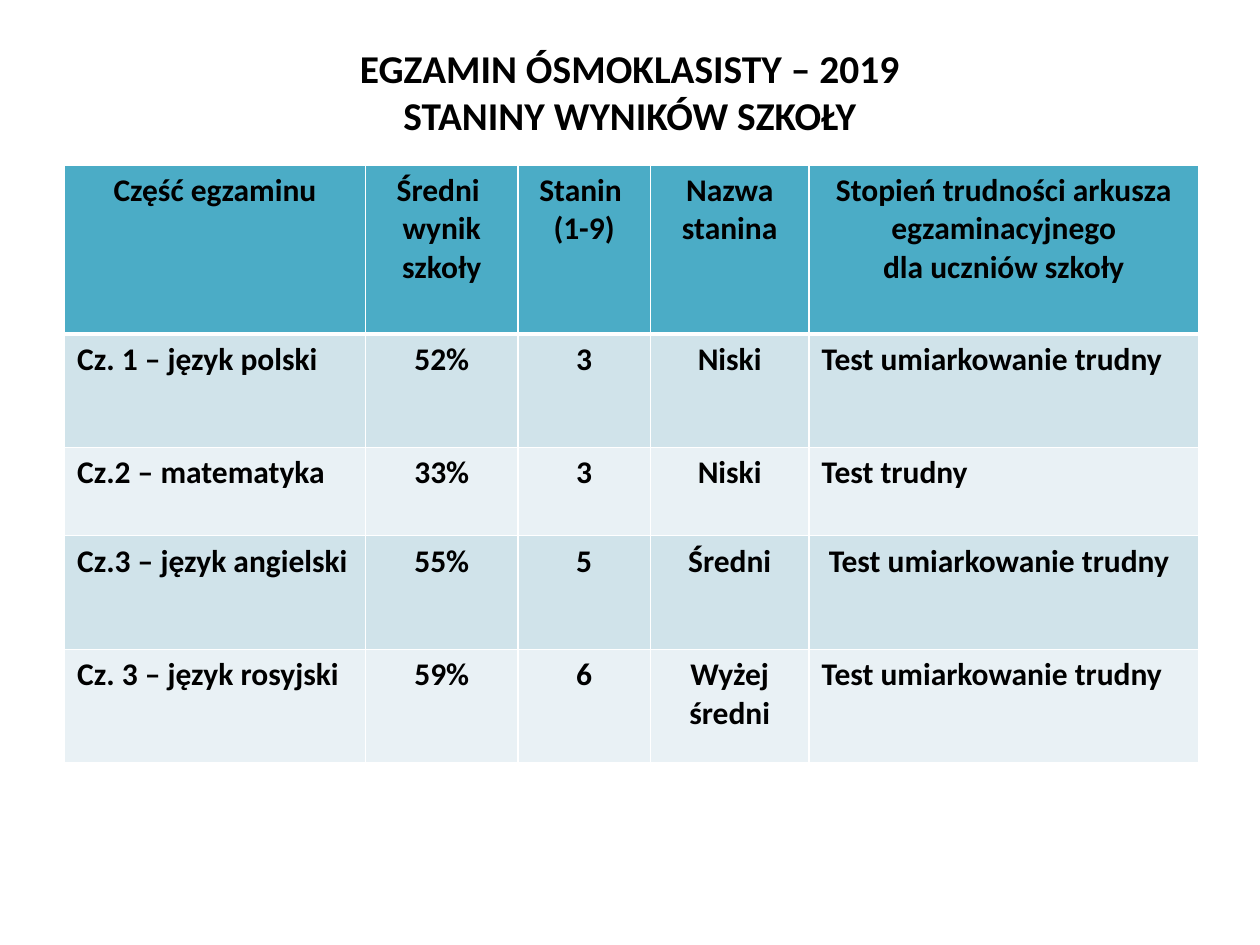
from dataclasses import dataclass

from lxml import etree
from pptx import Presentation
from pptx import util as u
from pptx.dml import color
from pptx.enum import text
from pptx.oxml import ns


@dataclass(frozen=True)
class Theme:
    font: str = "Calibri"
    ink: str = "000000"
    header: str = "4BACC6"
    bands: tuple[str, str] = ("D0E3EA", "E9F1F5")
    border: str = "FFFFFF"
    thin: float = 1
    thick: float = 3
    title_size: float = 22.5
    table_size: float = 18


@dataclass(frozen=True)
class Column:
    heading: tuple[str, ...]
    width: float
    align: text.PP_ALIGN = text.PP_ALIGN.CENTER


@dataclass(frozen=True)
class Result:
    values: tuple[str, ...]
    height: float = 2.29


THEME = Theme()
LEFT = text.PP_ALIGN.LEFT
CENTER = text.PP_ALIGN.CENTER
HEADER_HEIGHT = 3.4
TITLE_LINES = ("EGZAMIN ÓSMOKLASISTY – 2019", "STANINY WYNIKÓW SZKOŁY")
COLUMNS = (
    Column(("Część egzaminu",), 6.07, LEFT),
    Column(("Średni  wynik szkoły",), 3.07),
    Column(("Stanin ", "(1-9)"), 2.67),
    Column(("Nazwa stanina",), 3.2),
    Column(("Stopień trudności arkusza egzaminacyjnego", "dla uczniów szkoły"), 7.85, LEFT),
)
RESULTS = (
    Result(("Cz. 1 – język polski", "52%", "3", "Niski", "Test umiarkowanie trudny")),
    Result(("Cz.2 – matematyka", "33%", "3", "Niski", "Test trudny"), 1.78),
    Result(("Cz.3 – język angielski", "55%", "5", "Średni", " Test umiarkowanie trudny")),
    Result(("Cz. 3 – język rosyjski", "59%", "6", "Wyżej średni", "Test umiarkowanie trudny")),
)


def add_span(para, words: str, size: float) -> None:
    span = para.add_run()
    span.text = words
    span.font.name = THEME.font
    span.font.size = u.Pt(size)
    span.font.bold = True
    span.font.color.rgb = color.RGBColor.from_string(THEME.ink)


def add_border(cell, side: str, width: float) -> None:
    properties = cell._tc.get_or_add_tcPr()
    line = etree.SubElement(properties, ns.qn(f"a:ln{side}"), w=str(u.Pt(width)))
    fill = etree.SubElement(line, ns.qn("a:solidFill"))
    etree.SubElement(fill, ns.qn("a:srgbClr"), val=THEME.border)


def fill_cell(cell, lines: tuple[str, ...], align: text.PP_ALIGN, fill: str,
              top: float, bottom: float) -> None:
    borders = {"L": THEME.thin, "R": THEME.thin, "T": top, "B": bottom}
    for side, width in borders.items():
        add_border(cell, side, width)
    cell.fill.solid()
    cell.fill.fore_color.rgb = color.RGBColor.from_string(fill)
    for index, words in enumerate(lines):
        para = cell.text_frame.add_paragraph() if index else cell.text_frame.paragraphs[0]
        para.alignment = align
        add_span(para, words, THEME.table_size)


def format_title(page) -> None:
    title = page.shapes.title
    title.left, title.top = u.Cm(1.27), u.Cm(0.76)
    title.width, title.height = u.Cm(22.86), u.Cm(2.16)
    frame = title.text_frame
    frame.word_wrap = True
    frame.auto_size = text.MSO_AUTO_SIZE.NONE
    frame.vertical_anchor = text.MSO_ANCHOR.MIDDLE
    para = frame.paragraphs[0]
    para.alignment = CENTER
    for index, words in enumerate(TITLE_LINES):
        if index:
            para.add_line_break()
        add_span(para, words, THEME.title_size)


def add_results_table(page) -> None:
    heights = [HEADER_HEIGHT] + [result.height for result in RESULTS]
    width = sum(column.width for column in COLUMNS)
    table = page.shapes.add_table(
        len(heights), len(COLUMNS), u.Cm(1.3), u.Cm(3.33), u.Cm(width), u.Cm(sum(heights))
    ).table
    for row, height in zip(table.rows, heights):
        row.height = u.Cm(height)
    for index, column in enumerate(COLUMNS):
        table.columns[index].width = u.Cm(column.width)
        fill_cell(table.cell(0, index), column.heading, CENTER, THEME.header,
                  THEME.thin, THEME.thick)
        for number, result in enumerate(RESULTS):
            top = THEME.thin if number else THEME.thick
            fill_cell(table.cell(number + 1, index), (result.values[index],), column.align,
                      THEME.bands[number % 2], top, THEME.thin)


def main() -> None:
    deck = Presentation()
    deck.slide_width, deck.slide_height = u.Cm(25.4), u.Cm(19.05)
    page = deck.slides.add_slide(deck.slide_layouts[5])
    format_title(page)
    add_results_table(page)
    deck.save("out.pptx")


if __name__ == "__main__":
    main()
